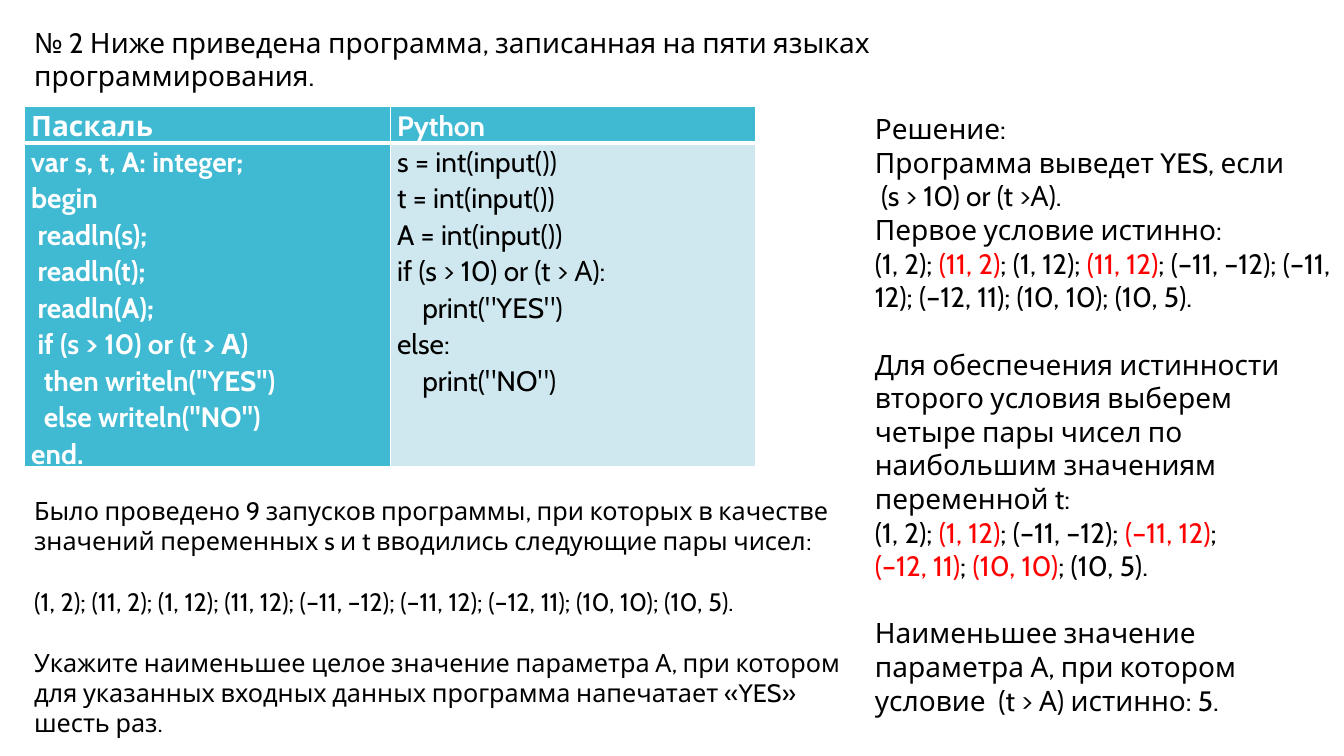
from lxml import etree
from pptx import Presentation
from pptx.dml.color import RGBColor
from pptx.enum.text import MSO_AUTO_SIZE
from pptx.oxml.ns import qn
from pptx.util import Pt

GROW = MSO_AUTO_SIZE.SHAPE_TO_FIT_TEXT
COLORS = {"text": "000000", "accent": "FF0000", "white": "FFFFFF",
          "header": "40BAD2", "pale": "CFE7EE"}
FONT = "Cabin"
CODE_SPACE = 4.5

TITLE = ["№ 2 Ниже приведена программа, записанная на пяти языках программирования."]
TASK = [
    "Было проведено 9 запусков программы, при которых в качестве значений "
    "переменных s и t вводились следующие пары чисел:",
    "(1, 2); (11, 2); (1, 12); (11, 12); (–11, –12); (–11, 12); (–12, 11); (10, 10); (10, 5).",
    "Укажите наименьшее целое значение параметра А, при котором для указанных "
    "входных данных программа напечатает «YES» шесть раз.",
]
# Asterisks enclose the accented pairs.
SOLUTION = [
    "Решение:",
    "Программа выведет YES, если",
    " (s > 10) or (t >А).",
    "Первое условие истинно:",
    "(1, 2);* (11, 2)*; (1, 12);* (11, 12)*; (–11, –12); (–11, 12); (–12, 11); (10, 10); (10, 5).",
    "Для обеспечения истинности второго условия выберем четыре пары чисел по "
    "наибольшим значениям переменной t:",
    "(1, 2); *(1, 12)*; (–11, –12); *(–11, 12)*; \n*(–12, 11)*; *(10, 10)*; (10, 5).",
    "Наименьшее значение параметра А, при котором условие  (t > А) истинно: 5.",
]
# Each code line is (indent in spaces, text).
PASCAL = [(0, "var s, t, A: integer;"), (0, "begin"), (1, "readln(s);"),
          (1, "readln(t);"), (1, "readln(A);"), (1, "if (s > 10) or (t > А)"),
          (2, 'then writeln("YES")'), (2, 'else writeln("NO")'), (0, "end.")]
PYTHON = [(0, "s = int(input())"), (0, "t = int(input())"), (0, "A = int(input())"),
          (0, "if (s > 10) or (t > А):"), (4, 'print("YES")'),
          (0, "else:"), (4, 'print("NO")')]


def write_text(para, text, size=20, color="text", bold=False,
               before=0, spacing=None, indent=0):
    """Fill a paragraph; parts between asterisks take the accent colour."""
    para.space_before = Pt(before)
    if spacing:
        para.line_spacing = spacing
    if indent:
        para._p.get_or_add_pPr().set("marL", str(Pt(indent)))
    for part_index, part in enumerate(text.split("*")):
        for line_index, line in enumerate(part.split("\n")):
            if line_index:
                para.add_line_break()
            if not line:
                continue
            span = para.add_run()
            span.text = line
            span.font.name = FONT
            span.font.size = Pt(size)
            span.font.bold = bold
            shade = "accent" if part_index % 2 else color
            span.font.color.rgb = RGBColor.from_string(COLORS[shade])


def next_paragraph(frame, index):
    return frame.add_paragraph() if index else frame.paragraphs[0]


class SlideBuilder:
    def __init__(self, deck):
        self.page = deck.slides.add_slide(deck.slide_layouts[6])

    def text_box(self, left, top, width, height, paragraphs, size=20, gap=0, gaps_before=()):
        box = self.page.shapes.add_textbox(Pt(left), Pt(top), Pt(width), Pt(height))
        frame = box.text_frame
        frame.word_wrap = True
        frame.auto_size = GROW
        for index, text in enumerate(paragraphs):
            write_text(next_paragraph(frame, index), text, size=size,
                       before=gap if index in gaps_before else 0)

    def code_table(self, left, top, column_width, row_heights, rows):
        """Each cell is (code lines, fill, text colour, bold)."""
        frame = self.page.shapes.add_table(
            len(rows), len(rows[0]), Pt(left), Pt(top),
            Pt(column_width * len(rows[0])), Pt(sum(row_heights)))
        table = frame.table
        table.horz_banding = False
        for column in table.columns:
            column.width = Pt(column_width)
        for row_index, cells in enumerate(rows):
            table.rows[row_index].height = Pt(row_heights[row_index])
            for column_index, content in enumerate(cells):
                cell = table.cell(row_index, column_index)
                self.code_cell(cell, *content, bottom=1 if row_index else 3)

    def code_cell(self, cell, lines, fill, color, bold, bottom):
        cell.margin_left = cell.margin_right = Pt(5)
        cell.margin_top = cell.margin_bottom = Pt(0)
        self.cell_borders(cell, lnL=1, lnR=1, lnT=1, lnB=bottom)
        cell.fill.solid()
        cell.fill.fore_color.rgb = RGBColor.from_string(COLORS[fill])
        for index, (spaces, text) in enumerate(lines):
            write_text(next_paragraph(cell.text_frame, index), text, color=color,
                       bold=bold, spacing=1.07, indent=spaces * CODE_SPACE)

    def cell_borders(self, cell, **widths):
        properties = cell._tc.get_or_add_tcPr()
        for side, width in widths.items():
            line = etree.SubElement(properties, qn(f"a:{side}"), w=str(Pt(width)))
            fill = etree.SubElement(line, qn("a:solidFill"))
            etree.SubElement(fill, qn("a:srgbClr"), val=COLORS["white"])


def main():
    deck = Presentation()
    deck.slide_width, deck.slide_height = Pt(960), Pt(540)
    slide = SlideBuilder(deck)
    slide.text_box(17.3, 14.4, 617, 78, TITLE)
    slide.text_box(17.3, 350, 600.5, 160, TASK, size=18, gap=22, gaps_before=(1, 2))
    slide.text_box(617.8, 76.3, 342.7, 465, SOLUTION, gap=24, gaps_before=(5, 7))
    slide.code_table(17.3, 76.3, 261.4, (25.5, 231.5), [
        [([(0, "Паскаль")], "header", "white", True),
         ([(0, "Python")], "header", "white", True)],
        [(PASCAL, "header", "white", True),
         (PYTHON, "pale", "text", False)],
    ])
    deck.save("out.pptx")


if __name__ == "__main__":
    main()
